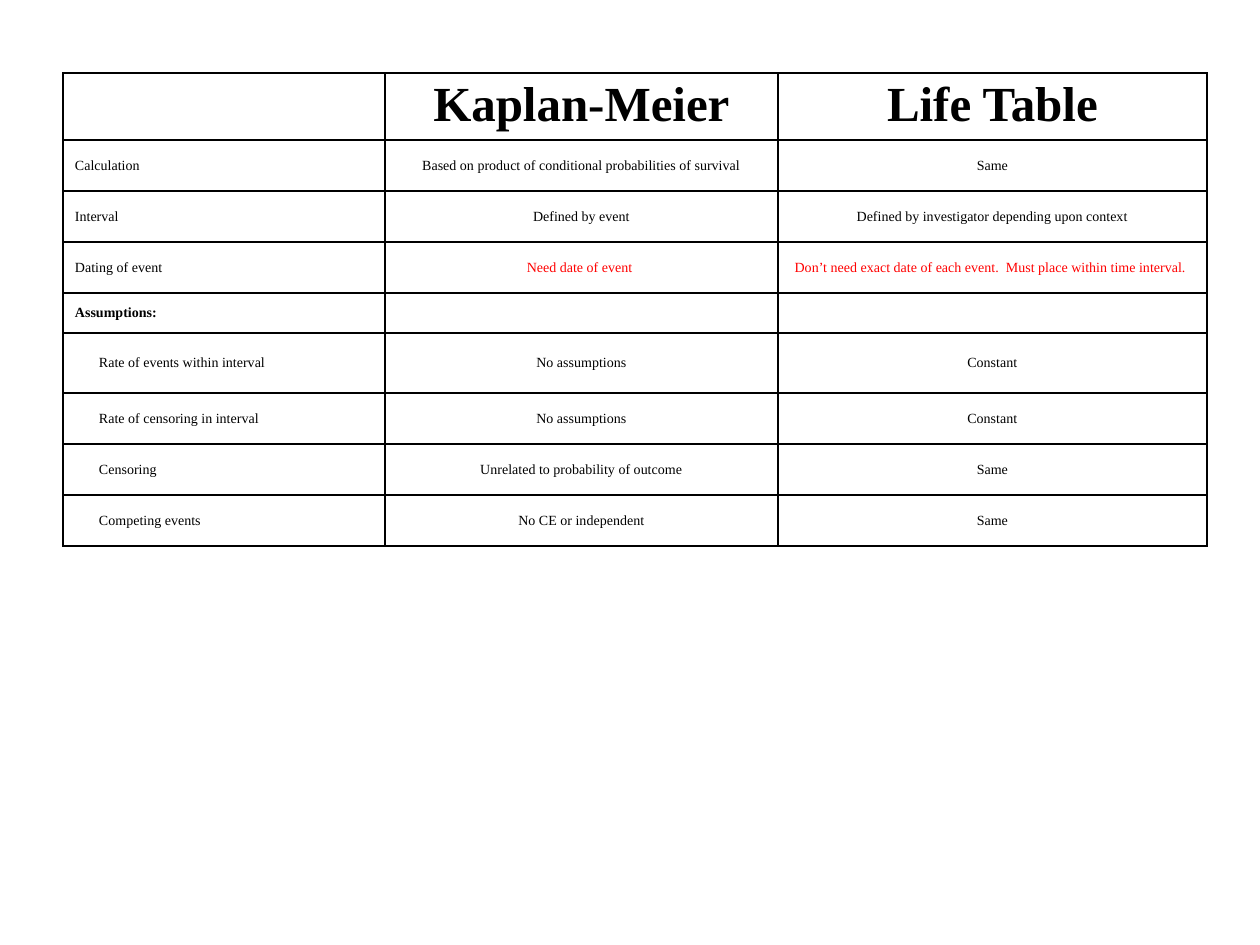
from lxml.etree import SubElement
from pptx import Presentation
from pptx.dml.color import RGBColor
from pptx.enum.text import MSO_ANCHOR, PP_ALIGN
from pptx.oxml.ns import qn
from pptx.util import Pt

PX = 914400 // 126
FONT = "Times New Roman"
COLORS = {"text": "000000", "accent": "FF0000", "border": "000000"}
COLS = [322, 393, 429]
HEIGHTS = [67, 51, 51, 51, 40, 60, 51, 51, 51]
ROWS = [
    ("", "Kaplan-Meier", "Life Table"),
    ("Calculation", "Based on product of conditional probabilities of survival", "Same"),
    ("Interval", "Defined by event", "Defined by investigator depending upon context"),
    ("Dating of event", "Need date of event ",
     "Don’t need exact date of each event.  Must place within time interval. "),
    ("Assumptions:", "", ""),
    ("Rate of events within interval", "No assumptions", "Constant"),
    ("Rate of censoring in interval", "No assumptions", "Constant"),
    ("Censoring", "Unrelated to probability of outcome", "Same"),
    ("Competing events", "No CE or independent", "Same"),
]
HEADER, DATING, ASSUMPTIONS = 0, 3, 4


def px(n):
    """Turn whole pixels into EMU."""
    return n * PX


def set_borders(cell):
    """Draw a thin line on all four sides of a cell."""
    tcPr = cell._tc.get_or_add_tcPr()
    for side in ("lnL", "lnR", "lnT", "lnB"):
        ln = SubElement(tcPr, qn(f"a:{side}"), w=str(Pt(1)))
        fill = SubElement(ln, qn("a:solidFill"))
        SubElement(fill, qn("a:srgbClr"), val=COLORS["border"])


def set_text(cell, text, size, bold, color, align, indent):
    """Write one formatted paragraph into a cell."""
    p = cell.text_frame.paragraphs[0]
    p.alignment = align
    if indent:
        pPr = p._p.get_or_add_pPr()
        pPr.set("marL", str(px(indent)))
        pPr.set("indent", "0")
    if not text:
        SubElement(p._p, qn("a:endParaRPr"), sz=str(size * 100))
        return
    r = p.add_run()
    r.text = text
    r.font.name = FONT
    r.font.size = Pt(size)
    r.font.bold = bold
    r.font.color.rgb = RGBColor.from_string(COLORS[color])


def format_cell(cell, i, j, text):
    """Style a cell by its row and column, and fill in its text."""
    cell.margin_left = cell.margin_right = px(12)
    cell.margin_top = cell.margin_bottom = px(5)
    cell.vertical_anchor = MSO_ANCHOR.TOP if i == HEADER else MSO_ANCHOR.MIDDLE
    set_borders(cell)
    cell.fill.background()
    set_text(
        cell, text,
        size=28 if i == HEADER and text else 8,
        bold=i in (HEADER, ASSUMPTIONS),
        color="accent" if i == DATING and j else "text",
        align=PP_ALIGN.CENTER if j else PP_ALIGN.LEFT,
        indent=24 if i > ASSUMPTIONS and j == 0 else 0,
    )


def add_comparison_table(s, left, top):
    """Add the table that compares the two methods."""
    frame = s.shapes.add_table(len(ROWS), len(COLS), px(left), px(top),
                               px(sum(COLS)), px(sum(HEIGHTS)))
    table = frame.table
    table.first_row = table.horz_banding = False
    for col, width in zip(table.columns, COLS):
        col.width = px(width)
    for i, (height, texts) in enumerate(zip(HEIGHTS, ROWS)):
        table.rows[i].height = px(height)
        for j, text in enumerate(texts):
            format_cell(table.cell(i, j), i, j, text)


def main():
    """Build the slide and save it."""
    prs = Presentation()
    prs.slide_width, prs.slide_height = px(1260), px(945)
    s = prs.slides.add_slide(prs.slide_layouts[6])
    add_comparison_table(s, 63, 73)
    prs.save("out.pptx")


if __name__ == "__main__":
    main()
